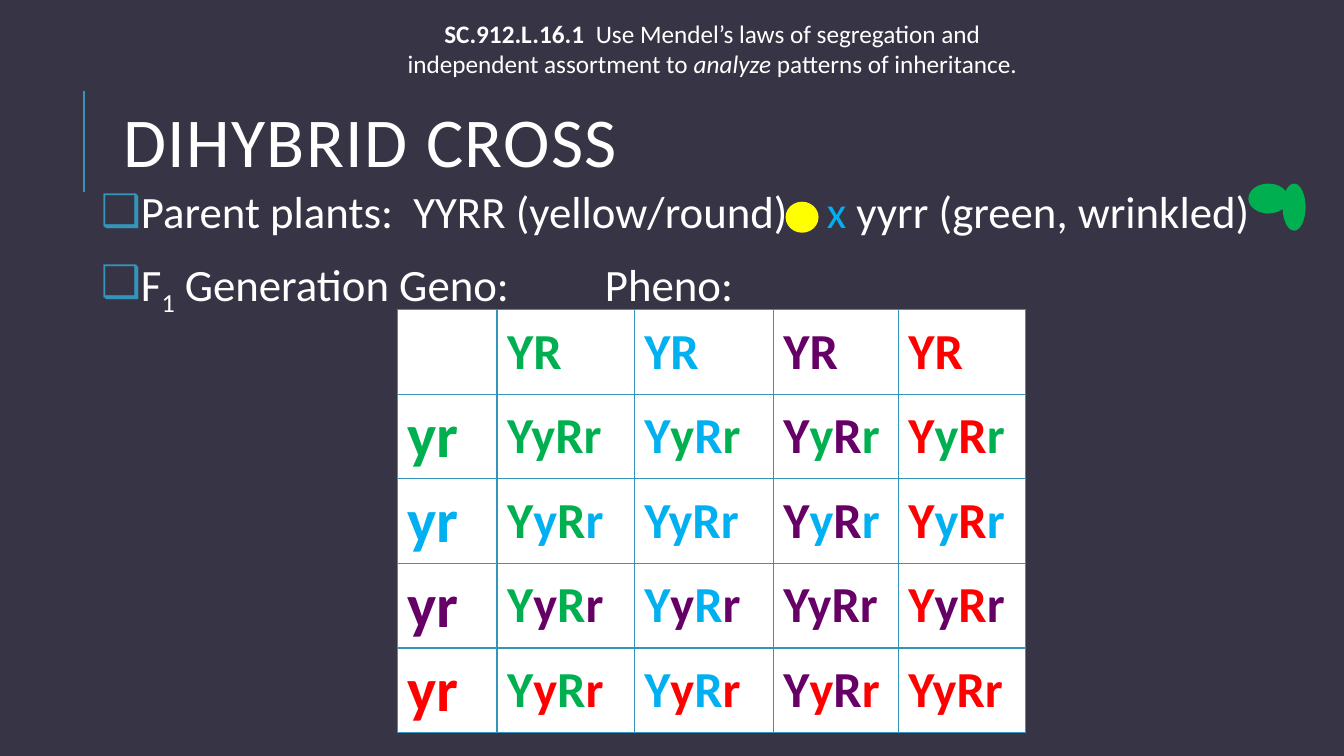
from lxml import etree
from pptx import Presentation
from pptx.dml.color import RGBColor
from pptx.enum.shapes import MSO_CONNECTOR, MSO_SHAPE
from pptx.enum.text import MSO_ANCHOR, MSO_AUTO_SIZE, PP_ALIGN
from pptx.oxml.ns import qn
from pptx.util import Inches, Pt

STRAIGHT, ELLIPSE = MSO_CONNECTOR.STRAIGHT, MSO_SHAPE.OVAL
MIDDLE, TOP = MSO_ANCHOR.MIDDLE, MSO_ANCHOR.TOP
LEFT, CENTER = PP_ALIGN.LEFT, PP_ALIGN.CENTER
FIXED, GROW = MSO_AUTO_SIZE.NONE, MSO_AUTO_SIZE.SHAPE_TO_FIT_TEXT

FONT = "Calibri"
COLORS = {
    "background": "373545", "white": "FFFFFF", "accent": "3494BA", "yellow": "FFFF00",
    "green": "00B050", "blue": "00B0F0", "purple": "660066", "red": "FF0000",
}
TITLE = "DIHYBRID CROSS"
STANDARD = [
    ("SC.912.L.16.1  ", {"bold": True}),
    ("Use Mendel’s laws of segregation and independent assortment to ", {}),
    ("analyze ", {"italic": True}),
    ("patterns of inheritance.", {}),
]
BULLETS = [
    [("Parent plants:  YYRR (yellow/round)\t  ", {}), ("x ", {"color": "blue"}),
     ("yyrr (green, wrinkled)", {})],
    [("F", {}), ("1", {"baseline": -25000}), (" Generation Geno:\t\tPheno:", {})],
]
ALLELE_COLORS = ["green", "blue", "purple", "red"]
DOMINANT, RECESSIVE = "YR", "yr"
COLUMN_WIDTHS = [0.99, 1.36, 1.38, 1.24, 1.26]
ROW_HEIGHT = 0.84
YELLOW_PEA = (7.8, 2.01, 0.31, 0.29)
WRINKLED_PEA = [(12.39, 1.83, 0.38, 0.28), (12.73, 1.83, 0.21, 0.45)]


def rgb(name):
    return RGBColor.from_string(COLORS[name])


def box(*lengths):
    return [Inches(length) for length in lengths]


def place(shape, *lengths):
    shape.left, shape.top, shape.width, shape.height = box(*lengths)


def write_runs(paragraph, runs, size):
    for text, style in runs:
        run = paragraph.add_run()
        run.text = text
        font = run.font
        font.name, font.size = FONT, Pt(size)
        font.bold = style.get("bold", False)
        font.italic = style.get("italic", False)
        font.color.rgb = rgb(style.get("color", "white"))
        for attribute in ("baseline", "spc"):
            if attribute in style:
                font._element.set(attribute, str(style[attribute]))


def add_bullet(paragraph):
    properties = paragraph._p.get_or_add_pPr()
    properties.set("marL", str(Inches(0.1)))
    properties.set("indent", str(Inches(-0.1)))
    color = etree.SubElement(properties, qn("a:buClr"))
    etree.SubElement(color, qn("a:srgbClr"), val=COLORS["accent"])
    etree.SubElement(properties, qn("a:buFont"), typeface="Wingdings")
    properties[-1].set("typeface", FONT)
    etree.SubElement(properties, qn("a:buChar"), char="❑")


def add_borders(cell):
    properties = cell._tc.get_or_add_tcPr()
    for side in ("lnL", "lnR", "lnT", "lnB"):
        line = etree.SubElement(properties, qn(f"a:{side}"), w=str(Pt(1)))
        fill = etree.SubElement(line, qn("a:solidFill"))
        etree.SubElement(fill, qn("a:srgbClr"), val=COLORS["accent"])


def add_pea(shapes, lengths, color):
    pea = shapes.add_shape(ELLIPSE, *box(*lengths))
    pea.shadow.inherit = False
    pea.fill.solid()
    pea.fill.fore_color.rgb = rgb(color)
    pea.line.color.rgb = rgb(color)
    pea.line.width = Pt(1.25)


def cross(row, column):
    if row == 0 and column == 0:
        return []
    upper, lower = ALLELE_COLORS[column - 1], ALLELE_COLORS[row - 1]
    if row == 0:
        return [(DOMINANT, upper)]
    if column == 0:
        return [(RECESSIVE, lower)]
    letters = [(letter, color) for pair in zip(DOMINANT, RECESSIVE)
               for letter, color in zip(pair, (upper, lower))]
    if upper == lower:
        return [("".join(letter for letter, color in letters), upper)]
    return letters


def add_punnett_square(slide):
    size = len(ALLELE_COLORS) + 1
    frame = slide.shapes.add_table(
        size, size, *box(3.94, 3.07, sum(COLUMN_WIDTHS), ROW_HEIGHT * size))
    table = frame.table
    table.first_row = table.horz_banding = False
    for column, width in zip(table.columns, COLUMN_WIDTHS):
        column.width = Inches(width)
    for row_index, row in enumerate(table.rows):
        row.height = Inches(ROW_HEIGHT)
        for column_index, cell in enumerate(row.cells):
            add_borders(cell)
            cell.fill.solid()
            cell.fill.fore_color.rgb = rgb("white")
            cell.vertical_anchor = MIDDLE
            runs = [(text, {"bold": True, "color": color})
                    for text, color in cross(row_index, column_index)]
            write_runs(cell.text_frame.paragraphs[0], runs, 36 if column_index else 44)


def main():
    presentation = Presentation()
    presentation.slide_width, presentation.slide_height = box(13.33, 7.5)
    slide = presentation.slides.add_slide(presentation.slide_layouts[1])
    slide.background.fill.solid()
    slide.background.fill.fore_color.rgb = rgb("background")

    rule = slide.shapes.add_connector(STRAIGHT, *box(0.83, 0.9, 0.83, 1.9))
    rule.line.color.rgb = rgb("accent")
    rule.line.width = Pt(1.5)
    etree.SubElement(rule._element.spPr, qn("a:effectLst"))

    title = slide.shapes.title
    place(title, 1.12, 0.64, 10.63, 1.64)
    title.text_frame.auto_size = FIXED
    title.text_frame.vertical_anchor = MIDDLE
    heading = title.text_frame.paragraphs[0]
    heading.alignment, heading.line_spacing = LEFT, 0.8
    write_runs(heading, [(TITLE, {"spc": 100})], 50)

    body = slide.placeholders[1]
    place(body, 0.95, 1.83, 11.88, 2.47)
    frame = body.text_frame
    frame.auto_size, frame.vertical_anchor = FIXED, TOP
    frame.margin_left = frame.margin_right = Inches(0.05)
    frame.margin_top = frame.margin_bottom = Inches(0.05)
    for index, runs in enumerate(BULLETS):
        paragraph = frame.add_paragraph() if index else frame.paragraphs[0]
        paragraph.line_spacing = 0.9
        paragraph.space_before, paragraph.space_after = Pt(12), Pt(2)
        add_bullet(paragraph)
        write_runs(paragraph, runs, 32)

    add_pea(slide.shapes, YELLOW_PEA, "yellow")

    standard = slide.shapes.add_textbox(*box(3.73, 0.13, 6.67, 0.71))
    standard.text_frame.word_wrap = True
    standard.text_frame.auto_size = GROW
    paragraph = standard.text_frame.paragraphs[0]
    paragraph.alignment = CENTER
    write_runs(paragraph, STANDARD, 18)

    wrinkled = slide.shapes.add_group_shape()
    for lengths in WRINKLED_PEA:
        add_pea(wrinkled.shapes, lengths, "green")

    add_punnett_square(slide)
    presentation.save("out.pptx")


if __name__ == "__main__":
    main()
